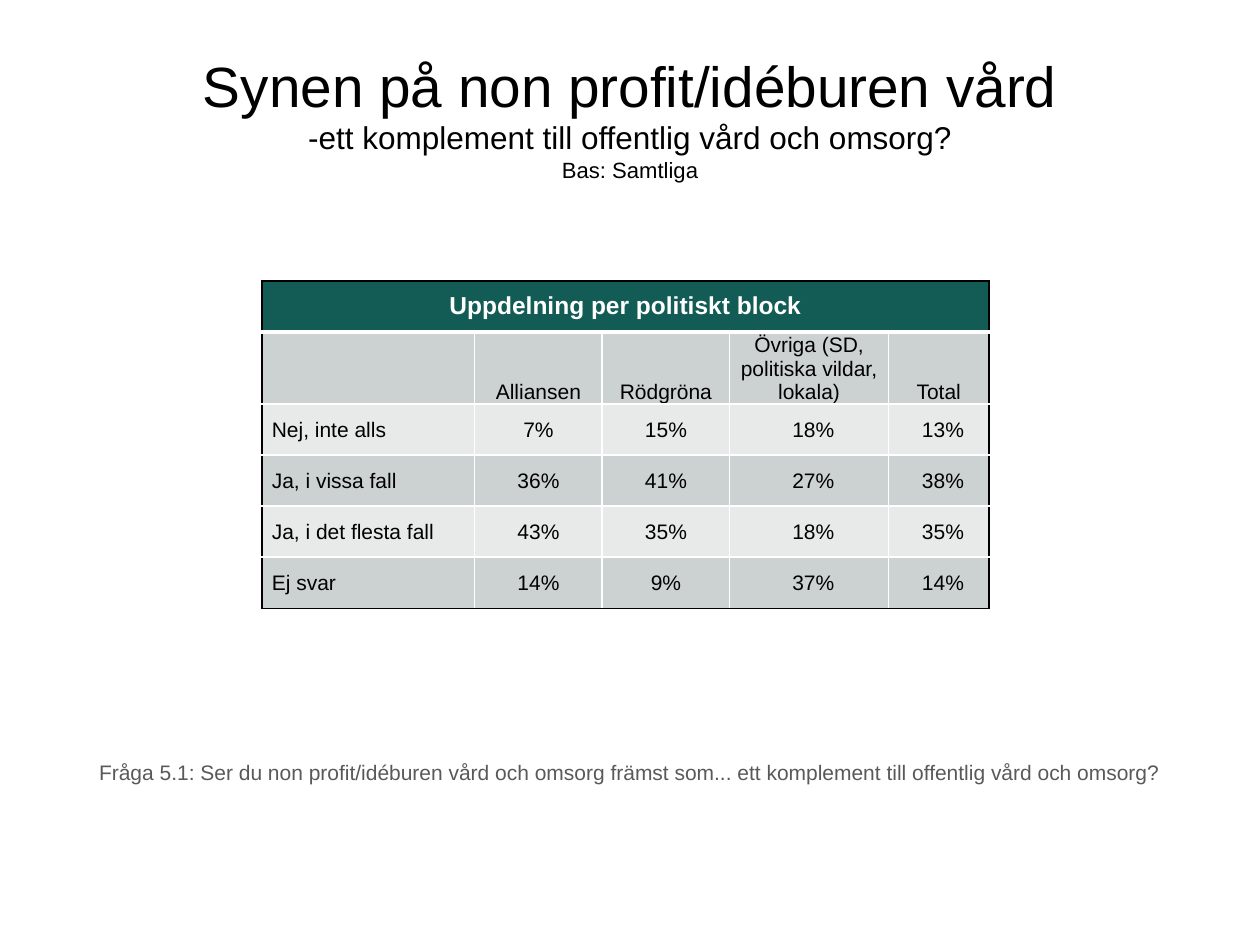
import pptx
import pptx.dml.color
import pptx.enum.text
import pptx.oxml
import pptx.oxml.ns
import pptx.util
from pptx.util import Cm

FONT = "Arial"
BLACK, WHITE, GREY = "000000", "FFFFFF", "595959"
HEADER_FILL, BAND_FILLS = "135C55", ("E7EAE9", "CCD2D1")

TITLE_LINES = [
    ("Synen på non profit/idéburen vård", 32.4),
    ("-ett komplement till offentlig vård och omsorg?", 18),
    ("Bas: Samtliga", 12.6),
]
TABLE_HEADING = "Uppdelning per politiskt block"
TABLE_ROWS = [
    ("", "Alliansen", "Rödgröna", "Övriga (SD, politiska vildar, lokala)", "Total"),
    ("Nej, inte alls", "7%", "15%", "18%", "13%"),
    ("Ja, i vissa fall", "36%", "41%", "27%", "38%"),
    ("Ja, i det flesta fall", "43%", "35%", "18%", "35%"),
    ("Ej svar", "14%", "9%", "37%", "14%"),
]
COLUMN_WIDTHS = (4.29, 2.57, 2.57, 3.2, 2.03)
ROW_HEIGHT = 1.03
INDENTED_COLUMNS = (0, 3, 4)
QUESTION = ("Fråga 5.1: Ser du non profit/idéburen vård och omsorg främst som... "
            "ett komplement till offentlig vård och omsorg?")

ALIGN = pptx.enum.text.PP_ALIGN
ANCHOR = pptx.enum.text.MSO_ANCHOR


def rgb(color):
    return pptx.dml.color.RGBColor.from_string(color)


def add_run(paragraph, text, size, color, bold=False):
    run = paragraph.add_run()
    run.text = text
    run.font.name = FONT
    run.font.size = pptx.util.Pt(size)
    run.font.bold = bold
    run.font.color.rgb = rgb(color)


def set_borders(cell, borders):
    """Draw borders given in the order left, right, top, bottom as (colour, points)."""
    properties = cell._tc.get_or_add_tcPr()
    for side, (color, points) in zip("LRTB", borders):
        properties.append(pptx.oxml.parse_xml(
            f'<a:ln{side} {pptx.oxml.ns.nsdecls("a")} w="{pptx.util.Pt(points)}">'
            f'<a:solidFill><a:srgbClr val="{color}"/></a:solidFill></a:ln{side}>'))


def add_title(slide):
    title = slide.shapes.title
    title.left, title.top, title.width, title.height = Cm(0), Cm(0.76), Cm(25.4), Cm(3.18)
    frame = title.text_frame
    frame.auto_size = pptx.enum.text.MSO_AUTO_SIZE.NONE
    frame.vertical_anchor = ANCHOR.MIDDLE
    paragraph = frame.paragraphs[0]
    paragraph.alignment = ALIGN.CENTER
    for index, (text, size) in enumerate(TITLE_LINES):
        if index:
            paragraph.add_line_break()
        add_run(paragraph, text, size, BLACK)


def add_block_table(slide):
    rows = [(TABLE_HEADING, "", "", "", "")] + TABLE_ROWS
    last_row, last_column = len(rows) - 1, len(COLUMN_WIDTHS) - 1
    table = slide.shapes.add_table(
        len(rows), len(COLUMN_WIDTHS), Cm(5.28), Cm(5.66),
        Cm(sum(COLUMN_WIDTHS)), Cm(ROW_HEIGHT * len(rows))).table
    for column, width in zip(table.columns, COLUMN_WIDTHS):
        column.width = Cm(width)
    for row in table.rows:
        row.height = Cm(ROW_HEIGHT)
    table.cell(0, 0).merge(table.cell(0, last_column))

    for row, texts in enumerate(rows):
        for column, text in enumerate(texts):
            cell = table.cell(row, column)
            set_borders(cell, [
                (BLACK if column == 0 else WHITE, 1),
                (BLACK if column == last_column or row == 0 else WHITE, 1),
                (BLACK, 1) if row == 0 else (WHITE, 3 if row == 1 else 1),
                (BLACK, 1) if row == last_row else (WHITE, 3 if row == 0 else 1),
            ])
            cell.fill.solid()
            cell.fill.fore_color.rgb = rgb(BAND_FILLS[row % 2] if row else HEADER_FILL)
            cell.vertical_anchor = ANCHOR.BOTTOM if row == 1 else ANCHOR.MIDDLE
            if not text:
                continue
            if row:
                indented = row > 1 and column in INDENTED_COLUMNS
                cell.margin_left = Cm(0.2 if indented else 0.03)
                cell.margin_right = cell.margin_top = Cm(0.03)
                cell.margin_bottom = Cm(0)
            paragraph = cell.text_frame.paragraphs[0]
            paragraph.alignment = ALIGN.LEFT if row and column == 0 else ALIGN.CENTER
            if row:
                add_run(paragraph, text, 12, BLACK)
            else:
                add_run(paragraph, text, 14, WHITE, bold=True)


def add_question(slide):
    box = slide.shapes.add_textbox(Cm(0), Cm(15.19), Cm(25.4), Cm(0.76))
    box.text_frame.word_wrap = True
    paragraph = box.text_frame.paragraphs[0]
    paragraph.alignment = ALIGN.CENTER
    add_run(paragraph, QUESTION, 12, GREY)


def main():
    presentation = pptx.Presentation()
    presentation.slide_width, presentation.slide_height = Cm(25.4), Cm(19.05)
    slide = presentation.slides.add_slide(presentation.slide_layouts.get_by_name("Title Only"))
    add_block_table(slide)
    add_question(slide)
    add_title(slide)
    presentation.save("out.pptx")


if __name__ == "__main__":
    main()
